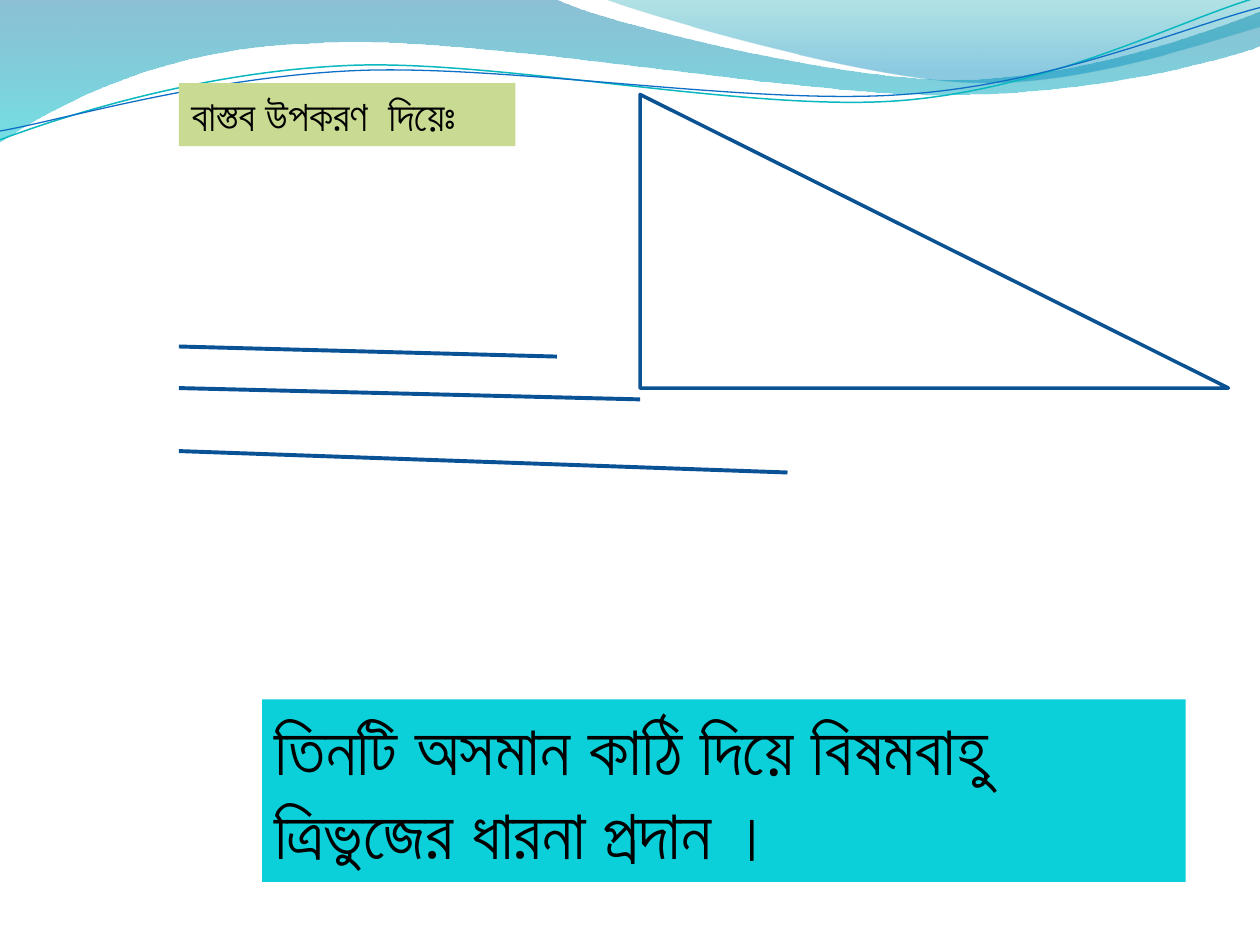
from dataclasses import dataclass
from math import cos, radians, sin

from lxml.etree import SubElement as Sub
from pptx import Presentation
from pptx.dml.color import RGBColor
from pptx.enum.shapes import MSO_CONNECTOR as CONN, MSO_SHAPE as SHAPE
from pptx.enum.text import MSO_AUTO_SIZE as AUTO
from pptx.oxml.ns import qn
from pptx.util import Inches, Pt


@dataclass(frozen=True)
class Theme:
    font: str = "Calibri"
    label_size: int = 24
    caption_size: int = 40
    text: str = "000000"
    label_fill: str = "C9DA92"
    caption_fill: str = "0BD0D9"
    triangle: str = "0B5292"
    stick: str = "095295"
    wave_teal: str = "0AB8BF"
    wave_blue: str = "0F6FC6"
    band_stops: tuple = ((0, "0074A1", 45), (1, "00C6CF", 55))
    crest_stops: tuple = ((0, "00A1A9", 30), (0.8, "008BBF", 45))


T = Theme()
WAVE_TURN = 357.3

BANDS = [
    ((-0.01, -0.01, 10.02, 1.14),
     [(0, 0), (4.4, -0.01), (4.76, 0.17, 6.64, 0.63, 7.58, 0.63),
      (8.53, 0.63, 9.58, 0.26, 10, 0.09), (10.01, 0.36),
      (9.83, 0.44, 8.7, 0.76, 7.46, 0.75), (6.22, 0.75, 3.82, 0.28, 2.57, 0.34),
      (1.29, 0.36, 0.46, 0.83, -0.01, 1.13), (0, 0)], T.band_stops),
    ((4.79, -0.01, 5.21, 0.7),
     [(4.79, -0.01), (5.09, 0.11, 6.82, 0.62, 7.69, 0.65),
      (8.56, 0.69, 9.61, 0.32, 10, 0.21), (10, 0), (4.79, -0.01)], T.crest_stops),
]
WAVES = [
    ((-0.02, 0.22, 10.02, 0.71),
     [(0, 1.11), (0.48, 0.93, 1.58, 0.57, 2.77, 0.52),
      (3.95, 0.47, 5.93, 0.89, 7.13, 0.8), (8.33, 0.71, 9.38, 0.15, 9.98, -0.02)],
     T.wave_teal, 0.85),
    ((-0.02, 0.3, 10.03, 0.58),
     [(0, 1.04), (0.47, 0.96, 1.64, 0.61, 2.83, 0.56),
      (4.03, 0.51, 5.97, 0.84, 7.17, 0.75), (8.36, 0.67, 9.41, 0.21, 10, 0.06)],
     T.wave_blue, 0.75),
]
CAPTION = ("তিনটি অসমান কাঠি দিয়ে বিষমবাহু ত্রিভুজের ধারনা প্রদান ।",
           (2.08, 5.55, 7.33, 1.45), T.caption_fill, T.caption_size)
LABEL = ("বাস্তব উপকরণ  দিয়েঃ", (1.42, 0.66, 2.67, 0.5), T.label_fill, T.label_size)
TRIANGLE = (5.08, 0.75, 4.67, 2.33)
STICK_LEFT = 1.42
STICKS = [(2.75, 4.42, 2.83), (3.08, 5.08, 3.17), (3.58, 6.25, 3.75)]


def rgb(value):
    return RGBColor.from_string(value)


def to_frame(x, y, box, turn):
    """Return a slide point as a point in the unturned frame of a box."""
    left, top, width, height = box
    dx, dy = x - left - width / 2, y - top - height / 2
    c, s = cos(radians(-turn)), sin(radians(-turn))
    return Inches(dx * c - dy * s + width / 2), Inches(dx * s + dy * c + height / 2)


def add_path(shapes, box, segments, close, turn=0):
    """Add a freeform made of straight and cubic segments."""
    builder = shapes.build_freeform(0, 0)
    builder.add_line_segments([(Inches(box[2]), Inches(box[3]))], close=close)
    s = builder.convert_to_shape()
    s.shadow.inherit = False
    s.left, s.top, s.width, s.height = map(Inches, box)
    s.rotation = turn
    path = next(s._element.spPr.iter(qn("a:path")))
    for child in list(path):
        path.remove(child)
    path.set("w", str(s.width))
    path.set("h", str(s.height))
    for i, seg in enumerate(segments):
        tag = "a:moveTo" if i == 0 else "a:lnTo" if len(seg) == 2 else "a:cubicBezTo"
        step = Sub(path, qn(tag))
        for x, y in zip(seg[::2], seg[1::2]):
            px, py = to_frame(x, y, box, turn)
            Sub(step, qn("a:pt"), x=str(px), y=str(py))
    if close:
        Sub(path, qn("a:close"))
    return s


def set_line(s, color, width):
    """Set the colour and width of an outline."""
    s.line.color.rgb = rgb(color)
    s.line.width = Pt(width)


def add_band(shapes, box, segments, stops):
    """Add a closed band with a translucent vertical gradient."""
    s = add_path(shapes, box, segments, True)
    s.line.fill.background()
    s.fill.gradient()
    s.fill.gradient_angle = 270
    for stop, (position, color, _) in zip(s.fill.gradient_stops, stops):
        stop.position = position
        stop.color.rgb = rgb(color)
    for node, (_, _, alpha) in zip(s._element.spPr.iter(qn("a:srgbClr")), stops):
        Sub(node, qn("a:alpha"), val=str(alpha * 1000))


def add_wave(shapes, box, segments, color, width):
    """Add an open, unfilled wave line."""
    s = add_path(shapes, box, segments, False, WAVE_TURN)
    s.fill.background()
    set_line(s, color, width)


def add_text(shapes, text, box, fill, size):
    """Add a filled text box."""
    s = shapes.add_textbox(*map(Inches, box))
    s.fill.solid()
    s.fill.fore_color.rgb = rgb(fill)
    tf = s.text_frame
    tf.word_wrap = True
    tf.auto_size = AUTO.SHAPE_TO_FIT_TEXT
    p = tf.paragraphs[0]
    p.text = text
    p.font.name = T.font
    p.font.size = Pt(size)
    p.font.color.rgb = rgb(T.text)


def add_triangle(shapes):
    """Add the outlined right triangle."""
    s = shapes.add_shape(SHAPE.RIGHT_TRIANGLE, *map(Inches, TRIANGLE))
    s.shadow.inherit = False
    s.fill.background()
    set_line(s, T.triangle, 2)


def add_stick(shapes, top, right, bottom):
    """Add one stick as a straight connector."""
    ends = map(Inches, (STICK_LEFT, top, right, bottom))
    s = shapes.add_connector(CONN.STRAIGHT, *ends)
    set_line(s, T.stick, 2.25)
    Sub(s._element.spPr, qn("a:effectLst"))


def main():
    """Build and save the slide."""
    prs = Presentation()
    prs.slide_width, prs.slide_height = Inches(10), Inches(7.5)
    shapes = prs.slides.add_slide(prs.slide_layouts[6]).shapes
    for band in BANDS:
        add_band(shapes, *band)
    for wave in WAVES:
        add_wave(shapes, *wave)
    add_text(shapes, *CAPTION)
    add_triangle(shapes)
    for stick in STICKS:
        add_stick(shapes, *stick)
    add_text(shapes, *LABEL)
    prs.save("out.pptx")


if __name__ == "__main__":
    main()
